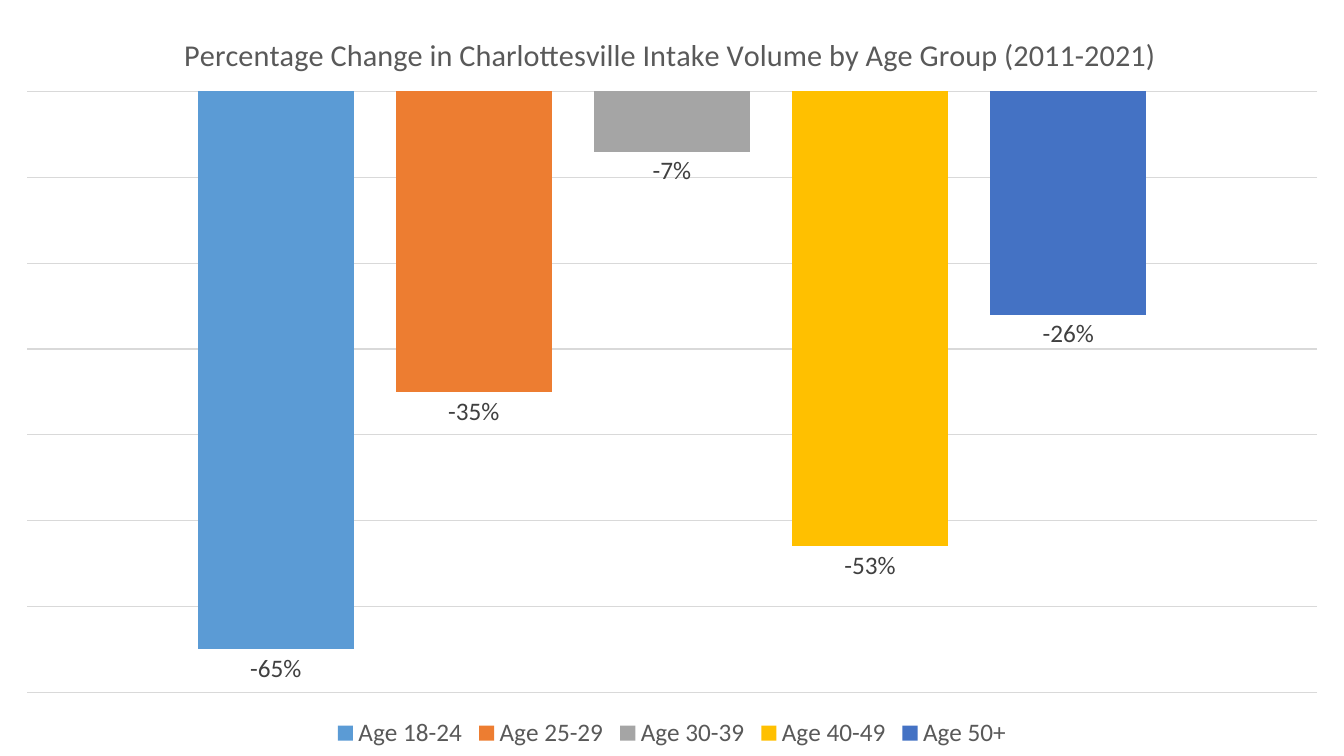
from dataclasses import dataclass

from lxml import etree
from pptx import Presentation
from pptx.chart.data import CategoryChartData
from pptx.dml.color import RGBColor
from pptx.enum.chart import XL_CHART_TYPE, XL_LABEL_POSITION, XL_LEGEND_POSITION
from pptx.oxml import parse_xml
from pptx.oxml.ns import nsdecls, qn
from pptx.util import Inches, Pt

COLUMNS = XL_CHART_TYPE.COLUMN_CLUSTERED
BOTTOM = XL_LEGEND_POSITION.BOTTOM
OUTSIDE_END = XL_LABEL_POSITION.OUTSIDE_END


@dataclass(frozen=True)
class Theme:
    font: str = "Calibri"
    text: str = "595959"
    label: str = "404040"
    grid: str = "D9D9D9"
    title_size: float = 21.6
    body_size: float = 18
    grid_width: float = 0.75


THEME = Theme()
TITLE = "Percentage Change in Charlottesville Intake Volume by Age Group (2011-2021)"
AGE_GROUPS = [
    ("Age 18-24", -0.65, "5B9BD5"),
    ("Age 25-29", -0.35, "ED7D31"),
    ("Age 30-39", -0.07, "A5A5A5"),
    ("Age 40-49", -0.53, "FFC000"),
    ("Age 50+", -0.26, "4472C4"),
]


def set_font(font, size=THEME.body_size, color=THEME.text):
    font.name = THEME.font
    font.size = Pt(size)
    font.bold = False
    font.color.rgb = RGBColor.from_string(color)


def add_text(tf, text, **fmt):
    r = tf.paragraphs[0].add_run()
    r.text = text
    set_font(r.font, **fmt)


def set_layout(element, after=None, inner=False, **place):
    for old in element.findall(qn("c:layout")):
        element.remove(old)
    layout = parse_xml(f"<c:layout {nsdecls('c')}/>")
    manual = etree.SubElement(layout, qn("c:manualLayout"))
    settings = {"layoutTarget": "inner"} if inner else {}
    settings.update(xMode="edge", yMode="edge", **place)
    for name, value in settings.items():
        etree.SubElement(manual, qn(f"c:{name}")).set("val", str(value))
    if after is None:
        element.insert(0, layout)
    else:
        element.find(qn(after)).addnext(layout)


def style_axes(chart):
    chart.category_axis.visible = False
    axis = chart.value_axis
    axis.visible = False
    axis.minimum_scale = -0.7
    axis.maximum_scale = 0
    axis.major_unit = 0.1
    axis.tick_labels.number_format = "0%"
    axis.tick_labels.number_format_is_linked = False
    axis.has_major_gridlines = True
    line = axis.major_gridlines.format.line
    line.color.rgb = RGBColor.from_string(THEME.grid)
    line.width = Pt(THEME.grid_width)


def style_series(plot):
    plot.gap_width = 219
    plot.overlap = -27
    plot.vary_by_categories = False
    for series, (_, _, color) in zip(plot.series, AGE_GROUPS):
        series.invert_if_negative = False
        series.format.fill.solid()
        series.format.fill.fore_color.rgb = RGBColor.from_string(color)
        labels = series.data_labels
        labels.show_value = True
        labels.number_format = "0%"
        labels.number_format_is_linked = False
        labels.position = OUTSIDE_END
        set_font(labels.font, color=THEME.label)


def add_age_chart(slide, left, top, width, height):
    data = CategoryChartData(number_format="0%")
    data.categories = ["1"]
    for name, change, _ in AGE_GROUPS:
        data.add_series(name, [change])
    chart = slide.shapes.add_chart(COLUMNS, left, top, width, height, data).chart
    set_font(chart.font)
    style_axes(chart)
    style_series(chart.plots[0])

    chart.has_title = True
    title = chart.chart_title
    add_text(title.text_frame, TITLE, size=THEME.title_size)
    title.include_in_layout = False

    chart.has_legend = True
    legend = chart.legend
    legend.position = BOTTOM
    legend.include_in_layout = False
    set_font(legend.font)

    plot_area = chart.plots[0]._element.getparent()
    set_layout(plot_area, inner=True, x=0.02, y=0.121, w=0.96, h=0.795)
    set_layout(title._element, after="c:tx", x=0.133, y=0.037)
    set_layout(legend._element, after="c:legendPos", x=0.245, y=0.948, w=0.51, h=0.05)


def main():
    prs = Presentation()
    prs.slide_width = Inches(13.33)
    prs.slide_height = Inches(7.5)
    slide = prs.slides.add_slide(prs.slide_layouts[6])
    add_age_chart(slide, 0, 0, prs.slide_width, prs.slide_height)
    prs.save("out.pptx")


if __name__ == "__main__":
    main()
